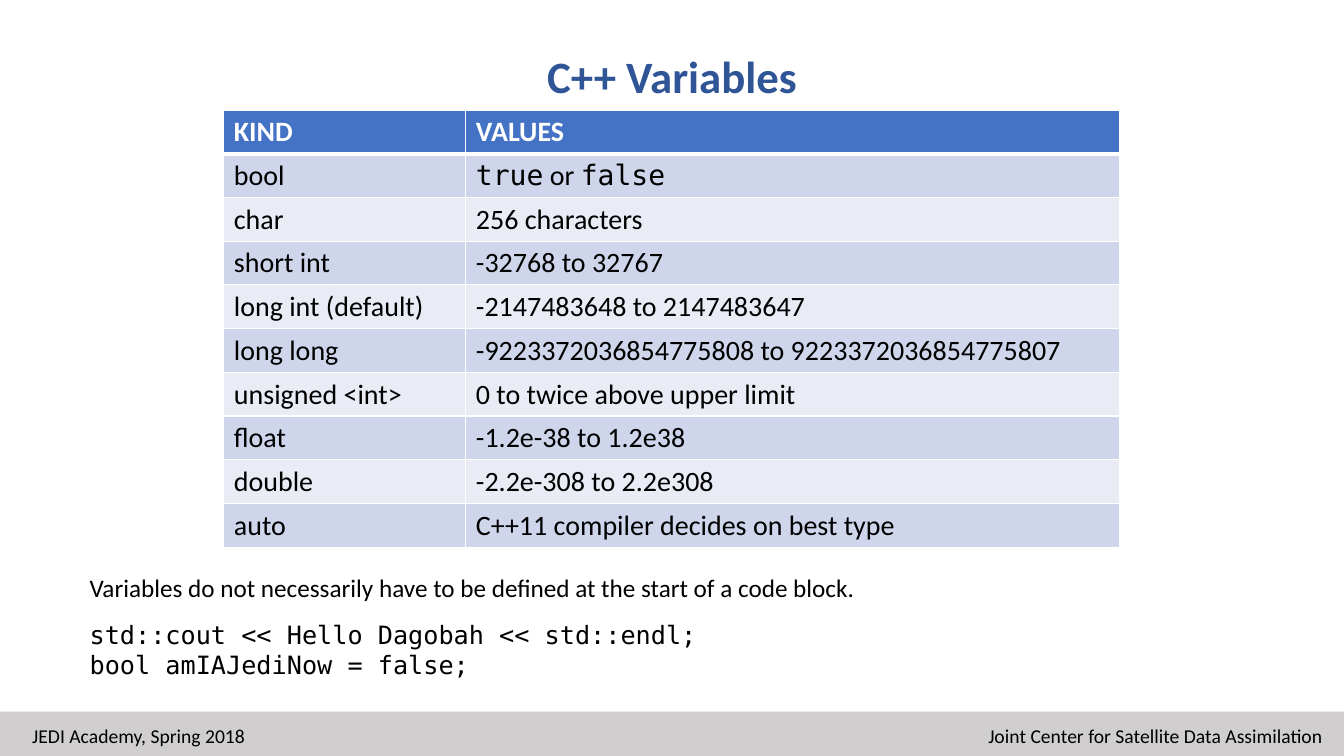
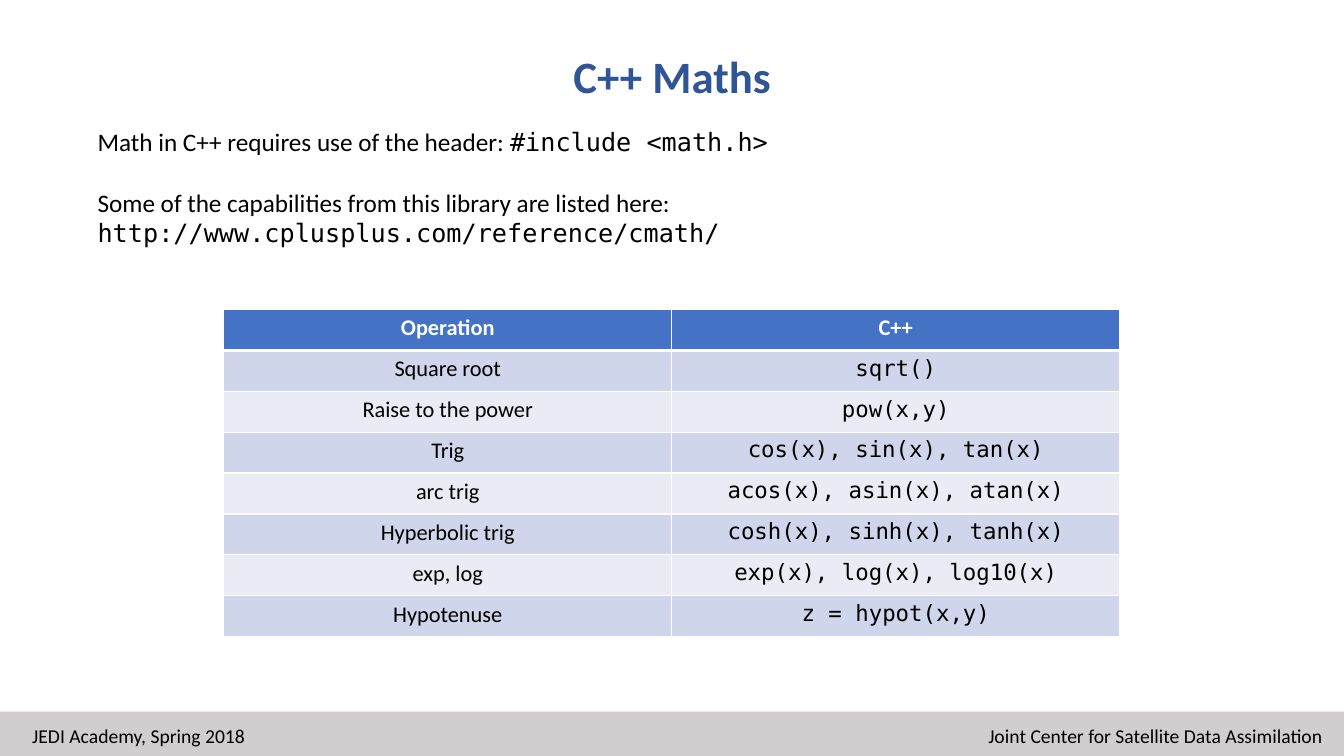
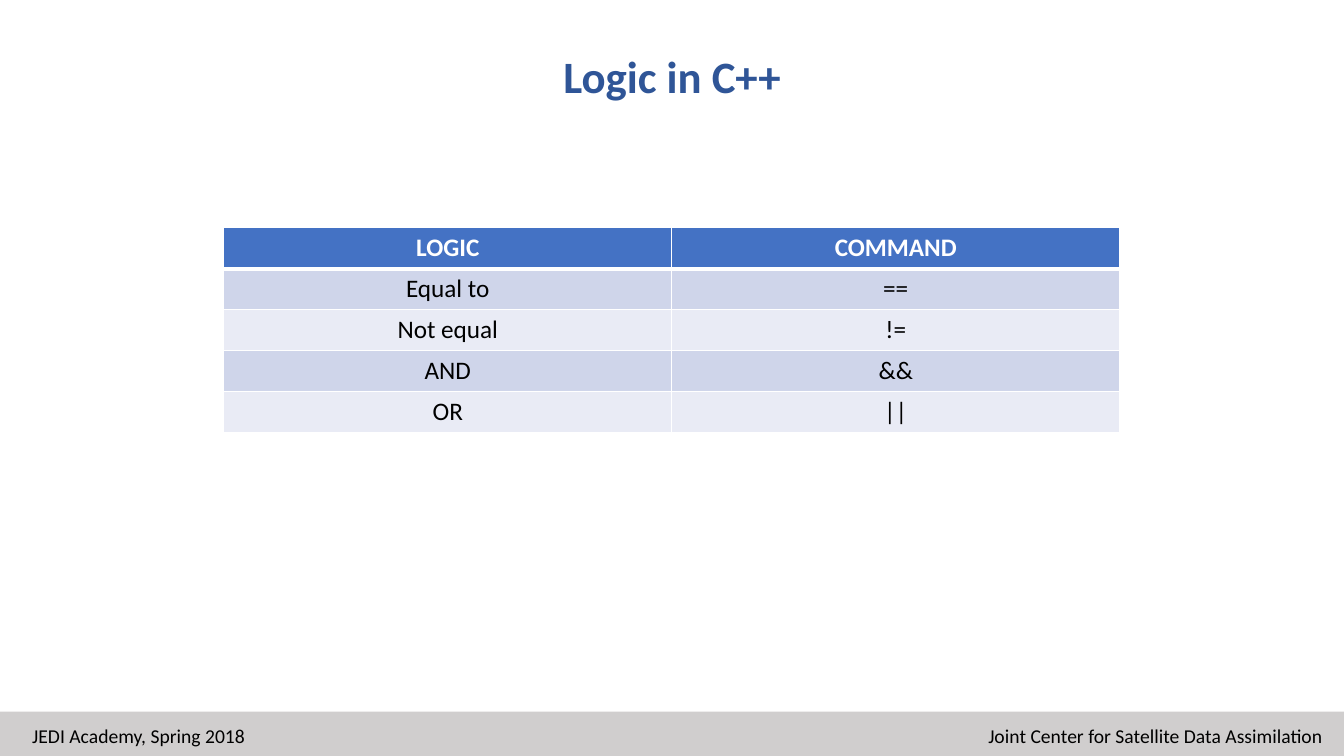
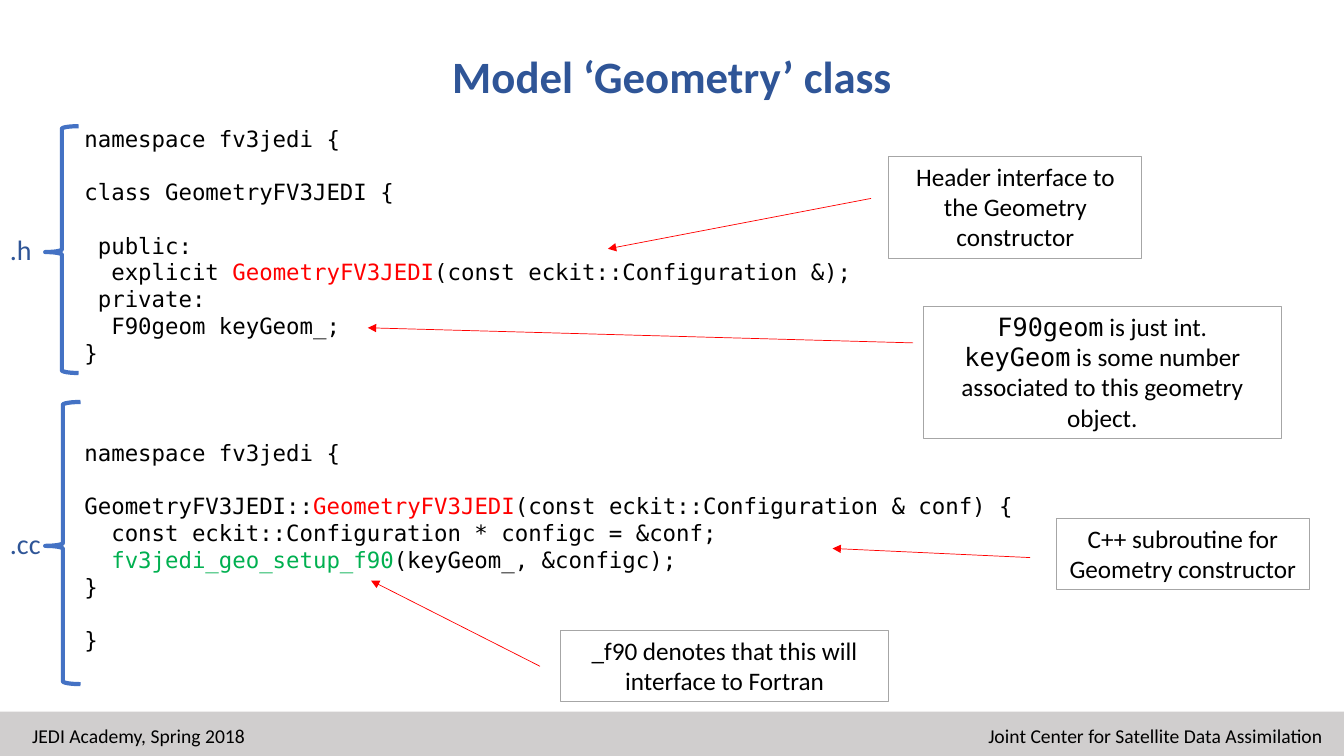
from lxml import etree
from pptx import Presentation
from pptx.dml.color import RGBColor
from pptx.enum import shapes, text
from pptx.oxml import ns
from pptx.util import Cm, Pt

COLOURS = {
    "title": "2F5597", "text": "000000", "white": "FFFFFF", "band": "D0CECE",
    "header": "4472C4", "row_dark": "CFD5EA", "row_light": "E9EBF5",
    "brace": "4472C4", "box_line": "A6A6A6", "red": "FF0000", "green": "00B050",
}
SANS, MONO = "Calibri", "DejaVu Sans Mono"
# style name: font, colour
STYLES = {
    "body": (SANS, "text"), "code": (MONO, "text"), "code_red": (MONO, "red"),
    "code_green": (MONO, "green"), "accent": (SANS, "title"), "head": (SANS, "white"),
}
LEFT, CENTRE, RIGHT = text.PP_ALIGN.LEFT, text.PP_ALIGN.CENTER, text.PP_ALIGN.RIGHT
TOP, MIDDLE = text.MSO_ANCHOR.TOP, text.MSO_ANCHOR.MIDDLE

WIDTH, HEIGHT = 33.87, 19.05
BAND_TOP = 17.93
TITLE_BOX = (3.4, 0.74, 27.08, 2.31)
FOOTERS = [
    ("Joint Center for Satellite Data Assimilation", 21.16, RIGHT),
    ("JEDI Academy, Spring 2018", 0.56, LEFT),
]
TABLE_LEFT, ROW_HEIGHT = 5.64, 1.03
EQUAL_COLUMNS = (11.29, 11.29)

# A paragraph is (space before in points, runs); a run is (text, style).
VARIABLES = [
    ("KIND", "VALUES"),
    ("bool", [("true", "code"), (" or ", "body"), ("false", "code")]),
    ("char", "256 characters"),
    ("short int", "-32768 to 32767"),
    ("long int (default)", "-2147483648 to 2147483647"),
    ("long long", "-9223372036854775808 to 9223372036854775807"),
    ("unsigned <int>", "0 to twice above upper limit"),
    ("float", "-1.2e-38 to 1.2e38"),
    ("double", "-2.2e-308 to 2.2e308"),
    ("auto", "C++11 compiler decides on best type"),
]
VARIABLES_NOTE = [
    (0, [("Variables do not necessarily have to be defined at the start of a code block.", "body")]),
    (12, [("std::cout << Hello Dagobah << std::endl;", "code")]),
    (0, [("bool amIAJediNow = false;", "code")]),
]
MATHS = [
    ("Operation", "C++"),
    ("Square root", "sqrt()"),
    ("Raise to the power", "pow(x,y)"),
    ("Trig", "cos(x), sin(x), tan(x)"),
    ("arc trig", "acos(x), asin(x), atan(x)"),
    ("Hyperbolic trig", "cosh(x), sinh(x), tanh(x)"),
    ("exp, log", "exp(x), log(x), log10(x)"),
    ("Hypotenuse", "z = hypot(x,y)"),
]
MATHS_NOTE = [
    (0, [("Math in C++ requires use of the header: ", "body"), ("#include <math.h>", "code")]),
    (22, [("Some of the capabilities from this library are listed here:", "body"),
          (" http://www.cplusplus.com/reference/cmath/", "code")]),
]
LOGIC = [
    ("LOGIC", "COMMAND"), ("Equal to", "=="), ("Not equal", "!="), ("AND", "&&"), ("OR", "||"),
]
CODE_GAP, FILE_GAP = 19, 52
GEOMETRY_CODE = [
    (0, [("namespace fv3jedi {", "code")]),
    (CODE_GAP, [("class GeometryFV3JEDI {", "code")]),
    (CODE_GAP, [(" public:", "code")]),
    (0, [("  explicit ", "code"), ("GeometryFV3JEDI", "code_red"),
         ("(const eckit::Configuration &);", "code")]),
    (0, [(" private:", "code")]),
    (0, [("  F90geom keyGeom_;", "code")]),
    (0, [("}", "code")]),
    (FILE_GAP, [("namespace fv3jedi {", "code")]),
    (CODE_GAP, [("GeometryFV3JEDI::", "code"), ("GeometryFV3JEDI", "code_red"),
                ("(const eckit::Configuration & conf) {", "code")]),
    (0, [("  const eckit::Configuration * configc = &conf;", "code")]),
    (0, [("  ", "code"), ("fv3jedi_geo_setup_f90", "code_green"),
         ("(keyGeom_, &configc);", "code")]),
    (0, [("}", "code")]),
    (CODE_GAP, [("}", "code")]),
]
# file ending, label box, brace box
FILES = [
    (".h", (0, 5.74, 1.14, 1.17), (1.14, 3.18, 0.84, 6.22)),
    (".cc", (0, 13.13, 1.93, 1.12), (1.14, 10.13, 0.89, 7.11)),
]
# paragraphs, box, arrow start, arrow tip
CALLOUTS = [
    ([(0, [("Header interface to the Geometry constructor", "body")])],
     (22.4, 3.94, 6.38, 2.57), (21.95, 5), (15.32, 6.27)),
    ([(0, [("F90geom", "code"), (" is just int.", "body")]),
      (0, [("keyGeom", "code"),
           (" is some number associated to this geometry object.", "body")])],
     (23.27, 7.72, 9.02, 3.33), (23.01, 8.64), (9.27, 8.26)),
    ([(0, [("C++ subroutine for Geometry constructor", "body")])],
     (26.62, 13.06, 6.38, 1.8), (25.96, 14.05), (20.98, 13.82)),
    ([(0, [("_f90 denotes that this will interface to Fortran", "body")])],
     (14.12, 15.88, 8.28, 1.8), (13.61, 16.79), (9.35, 14.63)),
]


def colour(name):
    return RGBColor.from_string(COLOURS[name])


def cms(lengths):
    return [Cm(length) for length in lengths]


def one_line(words, style="body"):
    return [(0, [(words, style)])]


def write(frame, paragraphs, size, align=LEFT, bold=False, anchor=TOP):
    """Fill a text frame with styled paragraphs."""
    frame.word_wrap = True
    frame.vertical_anchor = anchor
    for index, (gap, runs) in enumerate(paragraphs):
        paragraph = frame.add_paragraph() if index else frame.paragraphs[0]
        paragraph.alignment = align
        if gap:
            paragraph.space_before = Pt(gap)
        for words, style in runs:
            run = paragraph.add_run()
            run.text = words
            run.font.name, ink = STYLES[style]
            run.font.color.rgb = colour(ink)
            run.font.size = Pt(size)
            run.font.bold = bold


def add_text(parent, box, paragraphs, size, **options):
    write(parent.shapes.add_textbox(*cms(box)).text_frame, paragraphs, size, **options)


def add_outline(parent, kind, box, ink, weight):
    """Add an unfilled preset shape."""
    shape = parent.shapes.add_shape(kind, *cms(box))
    shape.shadow.inherit = False
    shape.fill.background()
    shape.line.color.rgb = colour(ink)
    shape.line.width = Pt(weight)
    return shape


def set_borders(cell, **weights):
    """Draw white cell borders, 1 pt unless a side is given."""
    properties = cell._tc.get_or_add_tcPr()
    for index, side in enumerate("LRTB"):
        line = etree.Element(ns.qn("a:ln" + side), w=str(Pt(weights.get(side, 1))))
        fill = etree.SubElement(line, ns.qn("a:solidFill"))
        etree.SubElement(fill, ns.qn("a:srgbClr"), val=COLOURS["white"])
        properties.insert(index, line)


def add_grid(slide, top, columns, rows, size, align=CENTRE, styles=("body", "body")):
    table = slide.shapes.add_table(
        len(rows), len(columns),
        *cms((TABLE_LEFT, top, sum(columns), ROW_HEIGHT * len(rows)))).table
    for column, width in zip(table.columns, columns):
        column.width = Cm(width)
    for r, row in enumerate(rows):
        table.rows[r].height = Cm(ROW_HEIGHT)
        for c, content in enumerate(row):
            cell = table.cell(r, c)
            if isinstance(content, str):
                content = [(content, styles[c] if r else "head")]
            write(cell.text_frame, [(0, content)], size, align, bold=r == 0)
            band = "row_dark" if r % 2 else "row_light"
            cell.fill.solid()
            cell.fill.fore_color.rgb = colour(band if r else "header")
            set_borders(cell, B=1 if r else 3, T=3 if r == 1 else 1)


def add_arrow(slide, start, tip):
    arrow = slide.shapes.add_connector(
        shapes.MSO_CONNECTOR.STRAIGHT, *cms(start + tip))
    arrow.line.color.rgb = colour("red")
    arrow.line.width = Pt(0.5)
    etree.SubElement(arrow.line._get_or_add_ln(), ns.qn("a:tailEnd"), type="triangle")
    etree.SubElement(arrow._element.spPr, ns.qn("a:effectLst"))


def new_slide(deck, title):
    """Add a slide with the shared band, footers and title."""
    slide = deck.slides.add_slide(deck.slide_layouts[6])
    band = slide.shapes.add_shape(
        shapes.MSO_SHAPE.RECTANGLE, *cms((0, BAND_TOP, WIDTH, HEIGHT - BAND_TOP)))
    band.shadow.inherit = False
    band.fill.solid()
    band.fill.fore_color.rgb = colour("band")
    band.line.fill.background()
    for words, left, align in FOOTERS:
        add_text(slide, (left, 18.11, 12.42, 0.86), one_line(words), 14, align=align)
    add_text(slide, TITLE_BOX, one_line(title, "accent"), 32,
             align=CENTRE, bold=True, anchor=MIDDLE)
    return slide


def add_geometry(slide):
    add_text(slide, (1.88, 3.02, 28.6, 13.77), GEOMETRY_CODE, 16)
    for ending, label_box, brace_box in FILES:
        group = slide.shapes.add_group_shape()
        brace = add_outline(group, shapes.MSO_SHAPE.LEFT_BRACE, brace_box, "brace", 3)
        brace.adjustments[0], brace.adjustments[1] = 0.08, 0.51
        add_text(group, label_box, one_line(ending, "accent"), 20)
    for paragraphs, box, start, tip in CALLOUTS:
        callout = add_outline(slide, shapes.MSO_SHAPE.RECTANGLE, box, "box_line", 0.75)
        write(callout.text_frame, paragraphs, 18, CENTRE)
        add_arrow(slide, start, tip)


def main():
    deck = Presentation()
    deck.slide_width, deck.slide_height = cms((WIDTH, HEIGHT))

    variables = new_slide(deck, "C++ Variables")
    add_grid(variables, 2.77, (6.1, 16.48), VARIABLES, 20, align=LEFT)
    add_text(variables, (2.01, 14.3, 27.48, 3), VARIABLES_NOTE, 18)

    maths = new_slide(deck, "C++ Maths")
    add_grid(maths, 7.8, EQUAL_COLUMNS, MATHS, 16, styles=("body", "code"))
    add_text(maths, (2.21, 3.05, 29.18, 3.33), MATHS_NOTE, 18)

    add_grid(new_slide(deck, "Logic in C++"), 5.74, EQUAL_COLUMNS, LOGIC, 18)

    add_geometry(new_slide(deck, "Model ‘Geometry’ class"))
    deck.save("out.pptx")


if __name__ == "__main__":
    main()
